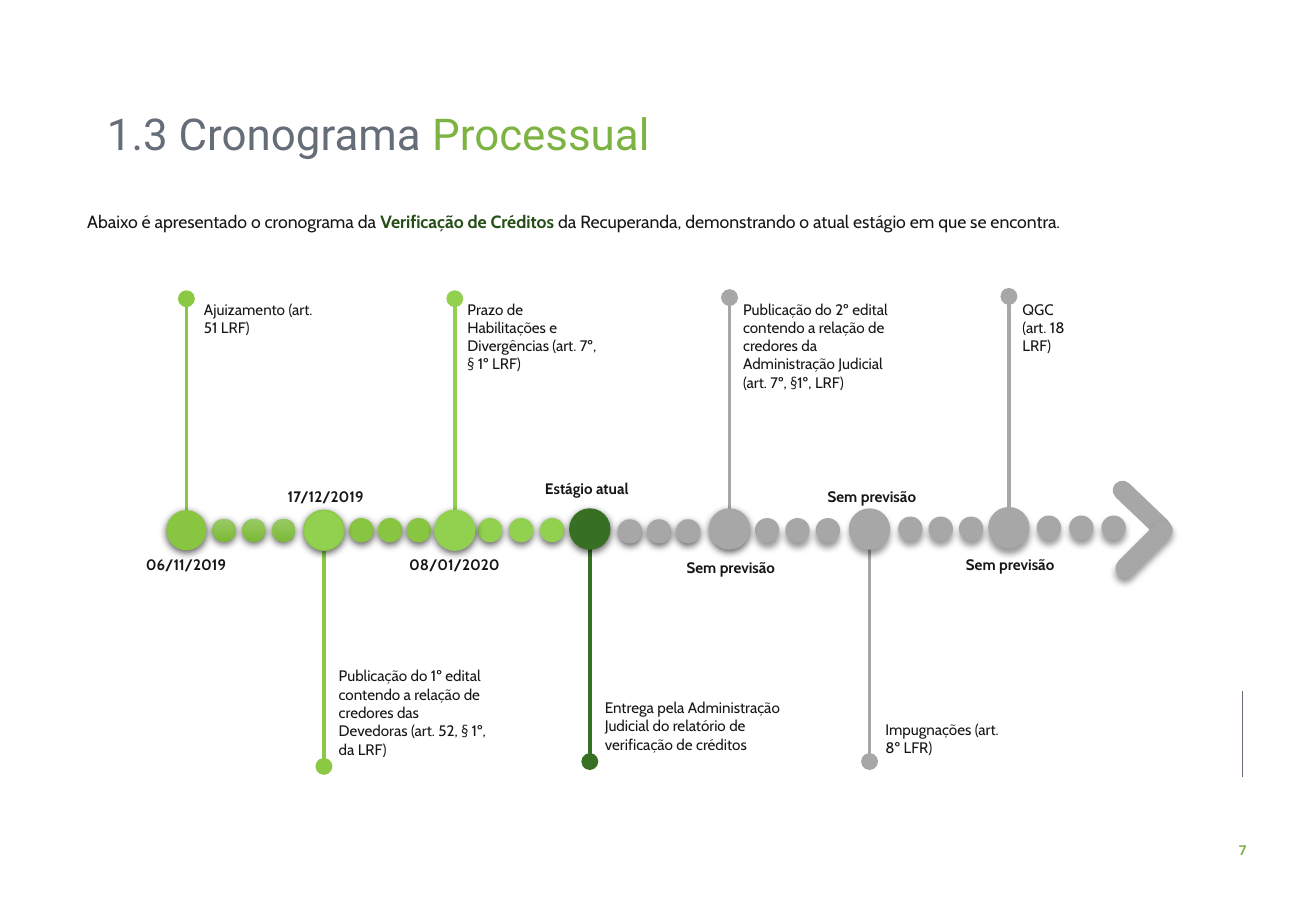
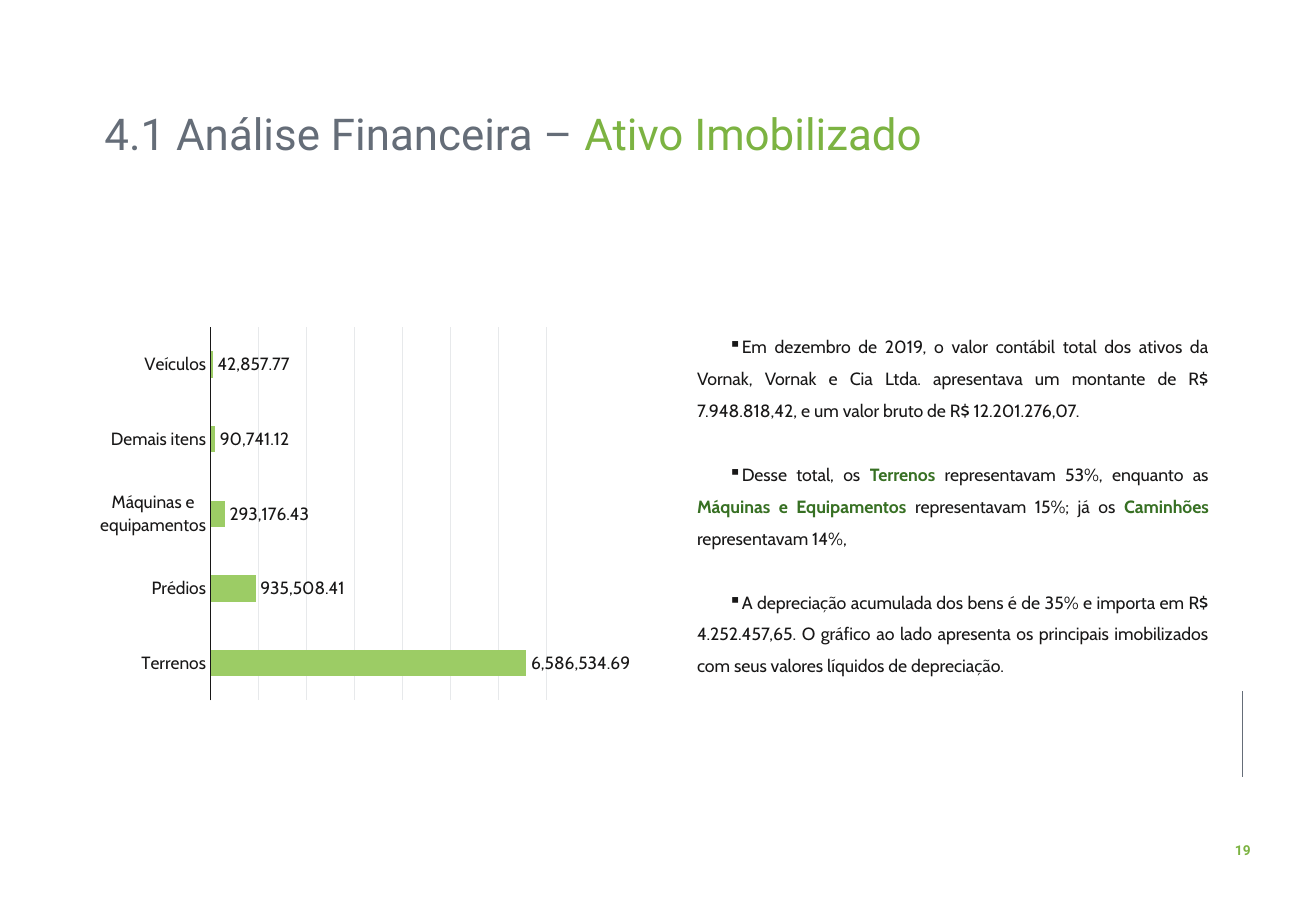
import pptx
import pptx.chart.data
import pptx.dml.color
import pptx.enum.chart
import pptx.enum.shapes
import pptx.enum.text
import pptx.oxml
import pptx.oxml.ns
import pptx.util
from dataclasses import dataclass
from lxml import etree

Pt = pptx.util.Pt
qn = pptx.oxml.ns.qn
ALIGN = pptx.enum.text.PP_ALIGN
SHAPE = pptx.enum.shapes.MSO_SHAPE


@dataclass(frozen=True)
class Theme:
    ink: str = "181717"
    slate: str = "656D78"
    green: str = "7CB342"
    dark: str = "377023"
    deep: str = "264F17"
    leaf: str = "8BC944"
    lime: str = "92D050"
    moss: str = "88C641"
    gray: str = "A7A7A7"
    bar: str = "9CCC65"
    grid: str = "E7E9EB"
    fade: tuple = ("98CA65", "7CB936")
    head: str = "Roboto"
    body: str = "Cabin"
    title: float = 26
    text: float = 10.5
    label: float = 9
    page: float = 8.1


T = Theme()
HARD = (63, 4.5, 1.5)
SOFT = (40, 4, 3)

INTRO = [
    ("Abaixo é apresentado o cronograma da ", T.ink, False),
    ("Verificação de Créditos ", T.deep, True),
    ("da Recuperanda, demonstrando o atual estágio em que se encontra.", T.ink, False),
]

STEPS = [
    dict(x=110.5, y=314.3, end=177.1, fill=T.moss, edge=None, stem=T.leaf, glow=HARD,
         date="06/11/2019", spot=(110.2, 325.4),
         text=["Ajuizamento (art. 51 LRF)"], box=(113.8, 174.2, 80.6, 29)),
    dict(x=192, y=314.3, end=454.3, fill=T.lime, edge=T.leaf, stem=T.leaf, glow=HARD,
         date="17/12/2019", spot=(193, 285.1),
         text=["Publicação do 1º edital contendo a relação de credores das "
               "Devedoras (art. 52, § 1º, da LRF)"], box=(193.7, 391.7, 103, 51)),
    dict(x=269.6, y=314.3, end=177.1, fill=T.lime, edge=T.lime, stem=T.lime, glow=HARD,
         date="08/01/2020", spot=(269.3, 325.4),
         text=["Prazo de Habilitações e Divergências (art. 7º, § 1º LRF)"],
         box=(270, 174.2, 93.6, 40)),
    dict(x=349.6, y=313.6, end=451.4, fill=T.dark, edge=T.dark, stem=T.dark, glow=HARD,
         date="Estágio atual", spot=(347.8, 280.8),
         text=["Entrega pela Administração Judicial do relatório de verificação de créditos"],
         box=(351.4, 410.4, 128.2, 40)),
    dict(x=432.4, y=313.6, end=176.4, fill=T.gray, edge=T.gray, stem=T.gray, glow=HARD,
         date="Sem previsão", spot=(433.1, 327.6),
         text=["Publicação do 2º edital contendo a relação de credores da "
               "Administração Judicial (art. 7º, §1º, LRF)"], box=(433.4, 174.2, 113, 51)),
    dict(x=515.4, y=313.6, end=451.4, fill=T.gray, edge=T.gray, stem=T.gray, glow=SOFT,
         date="Sem previsão", spot=(516.7, 285.1),
         text=["Impugnações (art. 8º LFR)"], box=(517.7, 423.4, 89.3, 29)),
    dict(x=598, y=312.8, end=175.7, fill=T.gray, edge=T.gray, stem=T.gray, glow=SOFT,
         date="Sem previsão", spot=(598.7, 325.4),
         text=["QGC", "(art. 18 LRF)"], box=(599, 174.2, 52, 40)),
]
DOTS = [
    (132.8, 17.7, 314.3, T.fade, HARD),
    (214.2, 17, 314.3, T.moss, HARD),
    (290.5, 18.4, 314.3, T.lime, HARD),
    (373.3, 17.3, 315, T.gray, HARD),
    (454.7, 18, 314.3, T.gray, SOFT),
    (539.6, 18, 313.4, T.gray, SOFT),
    (621.7, 19.2, 312.8, T.gray, SOFT),
]
ARROW = [(655.2, 295.9, 43.7), (656.6, 319.7, 315)]

NOTES = [
    [("Em dezembro de 2019, o valor contábil total dos ativos da Vornak, Vornak e Cia Ltda. "
      "apresentava um montante de R$ 7.948.818,42, e um valor bruto de R$ 12.201.276,07.",
      T.ink, False)],
    [("Desse total, os ", T.ink, False), ("Terrenos ", T.dark, True),
     ("representavam 53%, enquanto as ", T.ink, False),
     ("Máquinas e Equipamentos ", T.dark, True),
     ("representavam 15%; já os ", T.ink, False), ("Caminhões ", T.dark, True),
     ("representavam 14%,", T.ink, False)],
    [("A depreciação acumulada dos bens é de 35% e importa em R$ 4.252.457,65. O gráfico ao "
      "lado apresenta os principais imobilizados com seus valores líquidos de depreciação.",
      T.ink, False)],
]
ASSETS = {
    "Terrenos": 6586534.69,
    "Prédios": 935508.41,
    "Máquinas e equipamentos": 293176.43,
    "Demais itens": 90741.12,
    "Veículos": 42857.77,
}


def rgb(code):
    return pptx.dml.color.RGBColor.from_string(code)


def style(font, size, color, face=T.body, bold=False):
    font.size, font.name, font.bold = Pt(size), face, bold
    font.color.rgb = rgb(color)


def write(para, parts, size, face=T.body):
    for text, color, bold in parts:
        run = para.add_run()
        run.text = text
        style(run.font, size, color, face, bold)


def frame(slide, box):
    area = slide.shapes.add_textbox(*map(Pt, box)).text_frame
    area.word_wrap = True
    return area


def label(slide, box, lines, size=T.label, color=T.ink, face=T.body, bold=False, align=None):
    area = frame(slide, box)
    for i, line in enumerate(lines):
        para = area.add_paragraph() if i else area.paragraphs[0]
        para.alignment = align
        write(para, [(line, color, bold)], size, face)


def rule(slide, x, top, end, color, width, knob=False):
    line = slide.shapes.add_connector(
        pptx.enum.shapes.MSO_CONNECTOR.STRAIGHT, Pt(x), Pt(top), Pt(x), Pt(end))
    line.line.color.rgb = rgb(color)
    line.line.width = Pt(width)
    props = line._element.spPr
    if knob:
        etree.SubElement(props.find(qn("a:ln")), qn("a:headEnd"), type="oval", w="lg", len="lg")
    etree.SubElement(props, qn("a:effectLst"))


def solid(slide, kind, box, fill, edge=None, glow=None):
    shape = slide.shapes.add_shape(kind, *map(Pt, box))
    if isinstance(fill, tuple):
        shape.fill.gradient()
        shape.fill.gradient_angle = 270
        for stop, color in zip(shape.fill.gradient_stops, fill):
            stop.color.rgb = rgb(color)
    else:
        shape.fill.solid()
        shape.fill.fore_color.rgb = rgb(fill)
    if edge:
        shape.line.color.rgb = rgb(edge)
        shape.line.width = Pt(0.75)
    else:
        shape.line.fill.background()
    shape.shadow.inherit = False
    if glow:
        alpha, blur, dist = glow
        shade = etree.SubElement(
            shape._element.spPr.find(qn("a:effectLst")), qn("a:outerShdw"),
            blurRad=str(Pt(blur)), dist=str(Pt(dist)), dir="5400000", rotWithShape="0")
        black = etree.SubElement(shade, qn("a:srgbClr"), val="000000")
        etree.SubElement(black, qn("a:alpha"), val=str(alpha * 1000))
    return shape


def disc(slide, x, y, size, fill, edge, glow):
    solid(slide, SHAPE.OVAL, (x - size / 2, y - size / 2, size, size), fill, edge, glow)


def start(deck, left, lead, tail, page):
    slide = deck.slides.add_slide(deck.slide_layouts[5])
    title = slide.shapes.title
    title.left, title.top, title.width, title.height = map(Pt, (left, 61.9, 589, 38.2))
    area = title.text_frame
    area.word_wrap = True
    area.auto_size = pptx.enum.text.MSO_AUTO_SIZE.NONE
    area.vertical_anchor = pptx.enum.text.MSO_ANCHOR.MIDDLE
    para = area.paragraphs[0]
    para.alignment = ALIGN.LEFT
    para.line_spacing = 0.9
    para.space_before = Pt(0)
    write(para, [(lead, T.slate, False), (tail, T.green, False)], T.title, T.head)
    rule(slide, 736.6, 409.7, 460.8, T.slate, 0.5)
    label(slide, (716.6, 495.4, 40, 17), [page], T.page, T.green, T.head, True, ALIGN.CENTER)
    return slide


def indent(para, size):
    props = para._p.get_or_add_pPr()
    props.set("marL", "0")
    props.set("indent", str(Pt(size)))
    return props


def timeline(deck):
    slide = start(deck, 56.2, "1.3 Cronograma ", "Processual", "7")
    para = frame(slide, (22.3, 119.5, 732, 22)).paragraphs[0]
    indent(para, 22.3)
    para.alignment = ALIGN.JUSTIFY
    para.line_spacing = 1.14
    write(para, INTRO, T.text)
    for step in STEPS:
        rule(slide, step["x"], step["end"], step["y"], step["stem"], 2, True)
    for left, gap, y, fill, glow in DOTS:
        edge = None if fill == T.fade else fill
        for i in range(3):
            disc(slide, left + i * gap, y, 13.7, fill, edge, glow)
    for step in STEPS:
        disc(slide, step["x"], step["y"], 23.8, step["fill"], step["edge"], step["glow"])
        label(slide, step["box"], step["text"])
        x, top = step["spot"]
        label(slide, (x - 45, top, 90, 18), [step["date"]], bold=True, align=ALIGN.CENTER)
    for (left, top, turn), glow in zip(ARROW, (None, SOFT)):
        bar = solid(slide, SHAPE.ROUNDED_RECTANGLE, (left, top, 43.2, 11.5), T.gray, glow=glow)
        bar.adjustments[0] = 0.5
        bar.rotation = turn


def chart(slide):
    data = pptx.chart.data.CategoryChartData(number_format="#,##0.00")
    data.categories = list(ASSETS)
    data.add_series("Series 1", list(ASSETS.values()))
    graph = slide.shapes.add_chart(
        pptx.enum.chart.XL_CHART_TYPE.BAR_CLUSTERED,
        *map(Pt, (13.7, 189.4, 360, 231.1)), data).chart
    graph.has_legend = graph.has_title = False
    style(graph.font, T.text, T.ink)
    plot = graph.plots[0]
    plot.gap_width = 182
    plot.vary_by_categories = False
    fill = plot.series[0].format.fill
    fill.solid()
    fill.fore_color.rgb = rgb(T.bar)
    plot.has_data_labels = True
    tags = plot.data_labels
    tags.show_value = True
    tags.number_format, tags.number_format_is_linked = "#,##0.00", False
    tags.position = pptx.enum.chart.XL_LABEL_POSITION.OUTSIDE_END
    style(tags.font, T.text, T.ink)
    cats, vals = graph.category_axis, graph.value_axis
    cats.major_tick_mark = pptx.enum.chart.XL_TICK_MARK.NONE
    cats.format.line.color.rgb = rgb(T.ink)
    cats.format.line.width = Pt(0.75)
    style(cats.tick_labels.font, T.text, T.ink)
    vals.visible = False
    vals.minimum_scale, vals.maximum_scale, vals.major_unit = 0, 7000000, 1000000
    grid = vals.major_gridlines.format.line
    grid.color.rgb = rgb(T.grid)
    grid.width = Pt(0.75)
    area = graph._chartSpace.find(".//" + qn("c:plotArea"))
    for old in area.findall(qn("c:layout")):
        area.remove(old)
    layout = etree.Element(qn("c:layout"))
    area.insert(0, layout)
    manual = etree.SubElement(layout, qn("c:manualLayout"))
    for tag, val in (("layoutTarget", "inner"), ("xMode", "edge"), ("yMode", "edge"),
                     ("x", "0.315"), ("y", "0.02"), ("w", "0.563"), ("h", "0.957")):
        etree.SubElement(manual, qn("c:" + tag), val=val)


def assets(deck):
    slide = start(deck, 54.7, "4.1 Análise Financeira – ", "Ativo Imobilizado", "19")
    area = frame(slide, (406.1, 189.4, 317.5, 215.3))
    for i, parts in enumerate(NOTES):
        para = area.add_paragraph() if i else area.paragraphs[0]
        etree.SubElement(indent(para, 18.7), qn("a:buChar"), char="▪")
        para.alignment = ALIGN.JUSTIFY
        para.line_spacing = 1.5
        para.space_before = Pt(19 if i else 0)
        write(para, parts, T.text)
    chart(slide)


def main():
    deck = pptx.Presentation()
    deck.slide_width, deck.slide_height = Pt(780), Pt(540)
    timeline(deck)
    assets(deck)
    deck.save("out.pptx")


if __name__ == "__main__":
    main()
